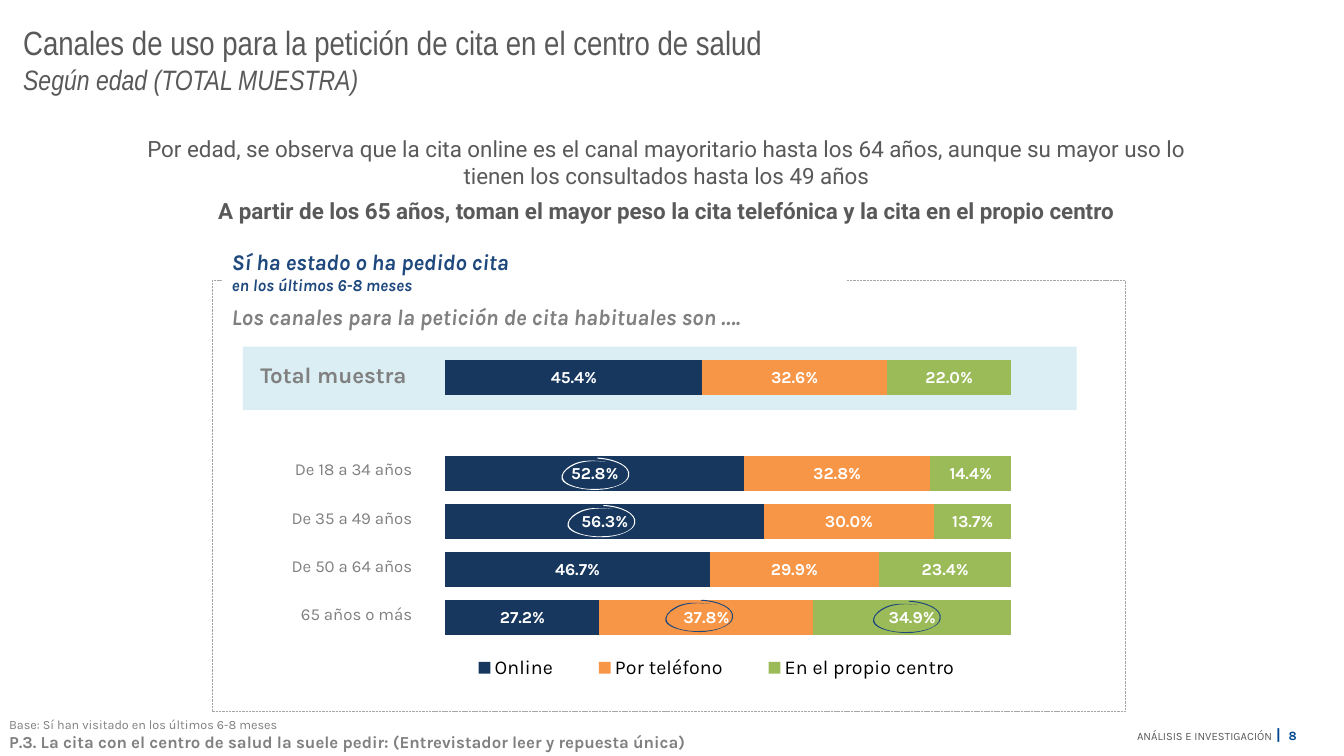
import pptx
import pptx.util
import pptx.chart.data
import pptx.dml.color
import pptx.enum.chart
import pptx.enum.dml
import pptx.enum.shapes
import pptx.enum.text
import pptx.oxml

Inches, Pt = pptx.util.Inches, pptx.util.Pt
RGBColor = pptx.dml.color.RGBColor
PP_ALIGN, MSO_ANCHOR = pptx.enum.text.PP_ALIGN, pptx.enum.text.MSO_ANCHOR

WHITE = RGBColor(0xFF, 0xFF, 0xFF)
BLACK = RGBColor(0, 0, 0)
DARK_GREY = RGBColor(0x59, 0x59, 0x59)
GREY = RGBColor(0x80, 0x80, 0x80)
FRAME_GREY = RGBColor(0xA6, 0xA6, 0xA6)
BLUE = RGBColor(0x1F, 0x49, 0x7D)
PAGE_BLUE = RGBColor(0x00, 0x47, 0x8F)
PALE_BLUE = RGBColor(0xDB, 0xEE, 0xF4)
NAVY = RGBColor(0x17, 0x37, 0x5E)
ORANGE = RGBColor(0xF7, 0x96, 0x46)
GREEN = RGBColor(0x9B, 0xBB, 0x59)

TITLE = [("Canales de uso para la petición de cita en el centro de salud\v", 24, False),
         ("Según edad (TOTAL MUESTRA)", 20, True)]
FINDINGS = [
    ("Por edad, se observa que la cita online es el canal mayoritario hasta los 64 años, "
     "aunque su mayor uso lo tienen los consultados hasta los 49 años", False),
    ("A partir de los 65 años, toman el mayor peso la cita telefónica "
     "y la cita en el propio centro", True)]
VISITED = [("Sí ha estado o ha pedido cita \v", 16), ("en los últimos 6-8 meses", 12)]
USUAL_CHANNELS = "Los canales para la petición de cita habituales son …."
BASE = [("Base: Sí han visitado en los últimos 6-8 meses", 9, False),
        ("P.3. La cita con el centro de salud la suele pedir: "
         "(Entrevistador leer y repuesta única)", 12, True)]
PAGE = [("ANÁLISIS E INVESTIGACIÓN", 8, DARK_GREY, False), (" ", 11, DARK_GREY, False),
        ("|  ", 11, PAGE_BLUE, True), ("8", 9, PAGE_BLUE, True)]

GROUPS = ["Total muestra ", None, "De 18 a 34 años", "De 35 a 49 años",
          "De 50 a 64 años", "65 años o más"]
CHANNELS = [("Online", NAVY, (45.4, None, 52.8, 56.3, 46.7, 27.2)),
            ("Por teléfono", ORANGE, (32.6, None, 32.8, 30, 29.9, 37.8)),
            ("En el propio centro", GREEN, (22, None, 14.4, 13.7, 23.4, 34.9))]

HIGHLIGHTS = [(5.54, 4.54, WHITE), (5.6, 5.01, WHITE), (6.57, 5.95, BLUE), (8.63, 5.96, BLUE)]
RING_START = (0.47, 0.04)
RING_CURVES = [
    ((0.37, 0.03), (0.27, 0.02), (0.18, 0.05)),
    ((0.10, 0.08), (0.04, 0.13), (0.03, 0.18)),
    ((0.00, 0.27), (0.21, 0.32), (0.37, 0.32)),
    ((0.52, 0.32), (0.69, 0.26), (0.70, 0.18)),
    ((0.72, 0.08), (0.56, 0.01), (0.39, 0.00)),
    ((0.38, 0.00), (0.38, 0.01), (0.39, 0.01)),
    ((0.55, 0.02), (0.70, 0.08), (0.69, 0.17)),
    ((0.69, 0.26), (0.53, 0.31), (0.38, 0.31)),
    ((0.23, 0.32), (0.04, 0.27), (0.04, 0.19)),
    ((0.04, 0.14), (0.10, 0.10), (0.16, 0.07)),
    ((0.25, 0.03), (0.36, 0.03), (0.46, 0.04)),
    ((0.47, 0.04), (0.47, 0.04), (0.47, 0.04))]


def style(font, name, size, color, bold=False, italic=False):
    font.name, font.size, font.bold, font.italic = name, Pt(size), bold, italic
    font.color.rgb = color


def add_run(paragraph, text, *look):
    paragraph.add_run().text = text.rstrip("\v")
    style(paragraph.runs[-1].font, *look)
    if text.endswith("\v"):
        paragraph.add_line_break()


def add_box(slide, left, top, width, height, fill=None):
    box = slide.shapes.add_shape(pptx.enum.shapes.MSO_SHAPE.RECTANGLE, Inches(left),
                                 Inches(top), Inches(width), Inches(height))
    box.shadow.inherit = False
    box.line.fill.background()
    if fill is None:
        box.fill.background()
    else:
        box.fill.solid()
        box.fill.fore_color.rgb = fill
    box.text_frame.word_wrap = True
    return box


def set_layout(element, x, y, w, h, inner=False):
    old = element.find(pptx.oxml.ns.qn("c:layout"))
    if old is not None:
        element.remove(old)
    target = '<c:layoutTarget val="inner"/>' if inner else ""
    sizes = "".join(f'<c:{k} val="{v}"/>' for k, v in zip("xywh", (x, y, w, h)))
    layout = pptx.oxml.parse_xml(
        f'<c:layout {pptx.oxml.ns.nsdecls("c")}><c:manualLayout>{target}'
        f'<c:xMode val="edge"/><c:yMode val="edge"/>{sizes}</c:manualLayout></c:layout>')
    element.insert(0 if inner else 1, layout)


def add_channels_chart(slide):
    data = pptx.chart.data.CategoryChartData()
    data.categories = [str(n + 1) for n in range(len(GROUPS))]
    for name, _, values in CHANNELS:
        data.add_series(name, values)
    chart = slide.shapes.add_chart(
        pptx.enum.chart.XL_CHART_TYPE.BAR_STACKED, Inches(4.3), Inches(3.51),
        Inches(5.91), Inches(4.02), data).chart
    style(chart.font, "Calibri", 10, BLACK)
    chart.has_title = False
    chart.category_axis.visible = False
    chart.category_axis.reverse_order = True
    chart.value_axis.visible = False
    chart.value_axis.has_major_gridlines = False
    chart.value_axis.minimum_scale, chart.value_axis.maximum_scale = 0, 100
    plot = chart.plots[0]
    plot.gap_width, plot.overlap, plot.vary_by_categories = 37, 100, False
    for series, (_, color, _) in zip(plot.series, CHANNELS):
        series.format.fill.solid()
        series.format.fill.fore_color.rgb = color
        labels = series.data_labels
        labels.show_value = True
        labels.number_format, labels.number_format_is_linked = r"0.0\%", False
        labels.position = pptx.enum.chart.XL_LABEL_POSITION.CENTER
        style(labels.font, "Karla", 12, WHITE, True)
    chart.has_legend = True
    legend = chart.legend
    legend.position = pptx.enum.chart.XL_LEGEND_POSITION.RIGHT
    legend.include_in_layout = False
    style(legend.font, "Karla", 14, BLACK)
    set_layout(chart._chartSpace.chart.plotArea, 0.02, 0, 0.95, 0.71, True)
    set_layout(legend._element, 0.01, 0.72, 0.93, 0.11)


def add_groups_table(slide):
    frame = slide.shapes.add_table(len(GROUPS), 1, Inches(2.41), Inches(3.51),
                                   Inches(1.69), Inches(2.83))
    table = frame.table
    table.first_row = table.horz_banding = False
    table._tbl.tblPr.find(pptx.oxml.ns.qn("a:tableStyleId")).text = \
        "{2D5ABB26-0587-4C30-8999-92F81FD0307C}"
    for index, group in enumerate(GROUPS):
        table.rows[index].height = Inches(0.48 if index else 0.43)
        cell = table.cell(index, 0)
        cell.fill.background()
        cell.vertical_anchor = MSO_ANCHOR.MIDDLE
        cell.margin_left = cell.margin_right = cell.margin_top = Inches(0.01)
        cell.margin_bottom = 0
        if group:
            cell.text = group
            paragraph = cell.text_frame.paragraphs[0]
            paragraph.alignment = PP_ALIGN.RIGHT
            style(paragraph.font, "Karla", 12 if index else 16, GREY, index == 0)


def add_ring(slide, left, top, color):
    start, *points = [(Inches(left + x), Inches(top + y))
                      for x, y in (RING_START, *sum(RING_CURVES, ()))]
    builder = slide.shapes.build_freeform(*start)
    builder.add_line_segments(points, close=True)
    ring = builder.convert_to_shape()
    segments = list(ring._element.iter(pptx.oxml.ns.qn("a:lnTo")))
    for curve, middle, end in zip(segments[::3], segments[1::3], segments[2::3]):
        curve.tag = pptx.oxml.ns.qn("a:cubicBezTo")
        for segment in (middle, end):
            curve.append(segment[0])
            segment.getparent().remove(segment)
    ring.shadow.inherit = False
    ring.fill.solid()
    ring.fill.fore_color.rgb = color
    ring.line.fill.background()


def main():
    deck = pptx.Presentation()
    deck.slide_width, deck.slide_height = Inches(13.33), Inches(7.5)
    slide = deck.slides.add_slide(deck.slide_layouts[5])

    title = slide.shapes.title
    title.left, title.top, title.width, title.height = map(Inches, (0.13, 0.17, 11.42, 0.84))
    title.text_frame.vertical_anchor = MSO_ANCHOR.TOP
    heading = title.text_frame.paragraphs[0]
    heading.alignment = PP_ALIGN.LEFT
    for text, size, italic in TITLE:
        add_run(heading, text, "Arial Narrow", size, DARK_GREY, False, italic)

    add_box(slide, 2.41, 3.44, 8.27, 0.63, PALE_BLUE)

    page = slide.shapes.add_textbox(Inches(11.05), Inches(7.14), Inches(1.91), Inches(0.29))
    page.text_frame.vertical_anchor = MSO_ANCHOR.MIDDLE
    page_line = page.text_frame.paragraphs[0]
    page_line.alignment = PP_ALIGN.RIGHT
    for text, size, color, bold in PAGE:
        add_run(page_line, text, "Karla", size, color, bold)

    base = slide.shapes.add_textbox(0, Inches(7.06), Inches(9.19), Inches(0.44)).text_frame
    base.word_wrap = True
    base.vertical_anchor = MSO_ANCHOR.BOTTOM
    base.margin_left = base.margin_right = Inches(0.09)
    base.margin_top = base.margin_bottom = Inches(0.04)
    base.text = "\n".join(text for text, _, _ in BASE)
    for paragraph, (_, size, bold) in zip(base.paragraphs, BASE):
        style(paragraph.font, "Karla", size, GREY, bold)

    add_channels_chart(slide)
    add_groups_table(slide)

    frame = add_box(slide, 2.1, 2.78, 9.06, 4.28)
    frame.line.color.rgb = FRAME_GREY
    frame.line.width = Pt(0.25)
    frame.line.dash_style = pptx.enum.dml.MSO_LINE.SQUARE_DOT

    intro = add_box(slide, 2.2, 2.41, 6.19, 0.93, WHITE).text_frame
    intro.vertical_anchor = MSO_ANCHOR.TOP
    visited, usual = intro.paragraphs[0], intro.add_paragraph()
    for text, size in VISITED:
        add_run(visited, text, "Karla", size, BLUE, True, True)
    usual.text = USUAL_CHANNELS
    style(usual.font, "Karla", 16, GREY, True, True)
    for paragraph in (visited, usual):
        paragraph.alignment = PP_ALIGN.LEFT
        paragraph.space_after = Pt(6)

    findings = add_box(slide, 1.06, 1.27, 11.1, 1.02, WHITE).text_frame
    findings.text = "\n".join(text for text, _ in FINDINGS)
    for paragraph, (_, bold) in zip(findings.paragraphs, FINDINGS):
        paragraph.alignment = PP_ALIGN.CENTER
        paragraph.space_after = Pt(6)
        style(paragraph.font, "Roboto", 16, DARK_GREY, bold)

    for highlight in HIGHLIGHTS:
        add_ring(slide, *highlight)

    deck.save("out.pptx")


if __name__ == "__main__":
    main()
